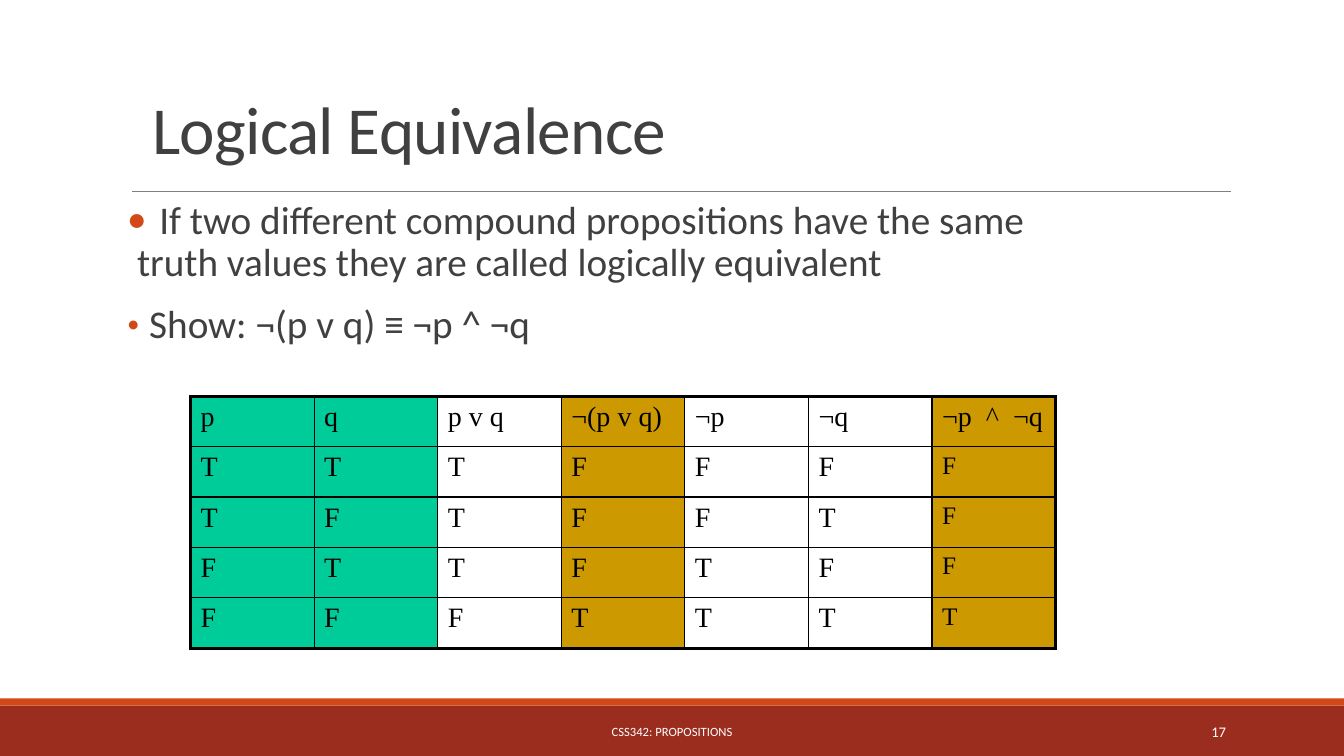
"""Build the slide on logical equivalence with its truth table."""
from itertools import product
from typing import Callable, NamedTuple

from lxml.etree import SubElement
from pptx import Presentation
from pptx.dml.color import RGBColor
from pptx.enum.shapes import MSO_CONNECTOR, MSO_SHAPE
from pptx.enum.text import MSO_ANCHOR, MSO_AUTO_SIZE, PP_ALIGN
from pptx.oxml.ns import qn
from pptx.util import Inches, Pt

WHITE = RGBColor(0xFF, 0xFF, 0xFF)
BLACK = RGBColor(0, 0, 0)
TEXT = RGBColor(0x40, 0x40, 0x40)
GRAY = RGBColor(0x80, 0x80, 0x80)
RUST = RGBColor(0x9B, 0x2D, 0x1F)
ORANGE = RGBColor(0xD3, 0x48, 0x17)
GREEN = RGBColor(0x00, 0xCC, 0x99)
GOLD = RGBColor(0xCC, 0x99, 0x00)


class Band(NamedTuple):
    top: float
    height: float
    color: RGBColor


class Note(NamedTuple):
    text: str
    left: float
    width: float
    size: float
    align: PP_ALIGN


class Bullet(NamedTuple):
    text: str
    margin: float
    scale: int
    tab: float


class Column(NamedTuple):
    head: str
    rule: Callable[[bool, bool], bool]
    fill: RGBColor
    size: int


BANDS = [Band(7, 0.5, RUST), Band(6.93, 0.07, ORANGE)]
NOTES = [
    Note("CSS342: PROPOSITIONS", 4.03, 5.27, 9, PP_ALIGN.CENTER),
    Note("17", 10.83, 1.43, 10.5, PP_ALIGN.RIGHT),
]
BULLETS = [
    Bullet("\tIf two different compound propositions have the same truth values "
           "they are called logically equivalent", 0.1, 100, 0.32),
    Bullet("Show: ¬(p v q) ≡ ¬p ^ ¬q", 0.22, 64, 0),
]
COLUMNS = [
    Column("p", lambda p, q: p, GREEN, 20),
    Column("q", lambda p, q: q, GREEN, 20),
    Column("p v q", lambda p, q: p or q, WHITE, 20),
    Column("¬(p v q)", lambda p, q: not (p or q), GOLD, 20),
    Column("¬p", lambda p, q: not p, WHITE, 20),
    Column("¬q", lambda p, q: not q, WHITE, 20),
    Column("¬p  ^  ¬q", lambda p, q: not p and not q, GOLD, 18),
]


def style(para, size: float, color: RGBColor, name: str = "Calibri") -> None:
    para.font.size = Pt(size)
    para.font.name = name
    para.font.color.rgb = color


def place(shape, left: float, top: float, width: float, height: float) -> None:
    shape.left, shape.top = Inches(left), Inches(top)
    shape.width, shape.height = Inches(width), Inches(height)
    shape.text_frame.auto_size = MSO_AUTO_SIZE.NONE
    shape.text_frame.word_wrap = True


def add_band(slide, band: Band) -> None:
    shape = slide.shapes.add_shape(
        MSO_SHAPE.RECTANGLE, 0, Inches(band.top), Inches(13.33), Inches(band.height))
    shape.shadow.inherit = False
    shape.fill.solid()
    shape.fill.fore_color.rgb = band.color
    shape.line.fill.background()


def add_rule(slide) -> None:
    line = slide.shapes.add_connector(
        MSO_CONNECTOR.STRAIGHT, Inches(1.31), Inches(1.9), Inches(12.21), Inches(1.9))
    line.line.color.rgb = GRAY
    line.line.width = Pt(0.5)
    SubElement(line._element.spPr, qn("a:effectLst"))


def add_note(slide, note: Note) -> None:
    box = slide.shapes.add_textbox(0, 0, 0, 0)
    place(box, note.left, 7.06, note.width, 0.4)
    box.text_frame.vertical_anchor = MSO_ANCHOR.MIDDLE
    para = box.text_frame.paragraphs[0]
    para.text = note.text
    para.alignment = note.align
    style(para, note.size, WHITE)


def set_title(title) -> None:
    place(title, 1.41, 0.32, 9.59, 1.4)
    title.text_frame.vertical_anchor = MSO_ANCHOR.BOTTOM
    para = title.text_frame.paragraphs[0]
    para.text = "Logical Equivalence"
    para.alignment = PP_ALIGN.LEFT
    para.line_spacing = 0.85
    style(para, 48, TEXT)
    para.runs[0].font._element.set("spc", "-50")


def set_bullet(para, item: Bullet) -> None:
    para.text = item.text
    para.line_spacing = 0.9
    para.space_before, para.space_after = Pt(12), Pt(2)
    props = para._p.get_or_add_pPr()
    props.set("marL", str(Inches(item.margin)))
    props.set("indent", str(-Inches(item.margin)))
    tint = SubElement(props, qn("a:buClr"))
    SubElement(tint, qn("a:srgbClr"), val=str(ORANGE))
    SubElement(props, qn("a:buSzPct"), val=str(item.scale * 1000))
    SubElement(props, qn("a:buFont"), typeface="Calibri")
    SubElement(props, qn("a:buChar"), char="•")
    if item.tab:
        tabs = SubElement(props, qn("a:tabLst"))
        SubElement(tabs, qn("a:tab"), pos=str(Inches(item.tab)), algn="l")
    style(para, 28, TEXT)


def set_body(body) -> None:
    place(body, 1.26, 1.94, 9.25, 3.17)
    frame = body.text_frame
    frame.margin_left = frame.margin_right = 0
    frame.vertical_anchor = MSO_ANCHOR.TOP
    for index, item in enumerate(BULLETS):
        set_bullet(frame.add_paragraph() if index else frame.paragraphs[0], item)


def set_edge(cell, side: str, width: float) -> None:
    line = SubElement(cell._tc.get_or_add_tcPr(), qn(f"a:{side}"), w=str(Pt(width)))
    fill = SubElement(line, qn("a:solidFill"))
    SubElement(fill, qn("a:srgbClr"), val=str(BLACK))


def add_truth(slide) -> None:
    cases = list(product((True, False), repeat=2))
    rows, cols = len(cases) + 1, len(COLUMNS)
    table = slide.shapes.add_table(
        rows, cols, Inches(1.89), Inches(3.93), Inches(8.58), Inches(2.5)).table
    table.first_row = table.horz_banding = False
    for (row, col) in product(range(rows), range(cols)):
        item, cell = COLUMNS[col], table.cell(row, col)
        value = item.rule(*cases[row - 1])
        para = cell.text_frame.paragraphs[0]
        para.text = ("T" if value else "F") if row else item.head
        style(para, item.size if row else 20, BLACK, "Times New Roman")
        outer = {"lnL": col == 0, "lnR": col == cols - 1,
                 "lnT": row == 0, "lnB": row == rows - 1}
        for side, edge in outer.items():
            set_edge(cell, side, 2.25 if edge else 1)
        cell.fill.solid()
        cell.fill.fore_color.rgb = item.fill


def main() -> None:
    deck = Presentation()
    deck.slide_width, deck.slide_height = Inches(13.33), Inches(7.5)
    slide = deck.slides.add_slide(deck.slide_layouts[1])
    for band in BANDS:
        add_band(slide, band)
    add_rule(slide)
    for note in NOTES:
        add_note(slide, note)
    set_title(slide.shapes.title)
    set_body(slide.placeholders[1])
    add_truth(slide)
    deck.save("out.pptx")


if __name__ == "__main__":
    main()
